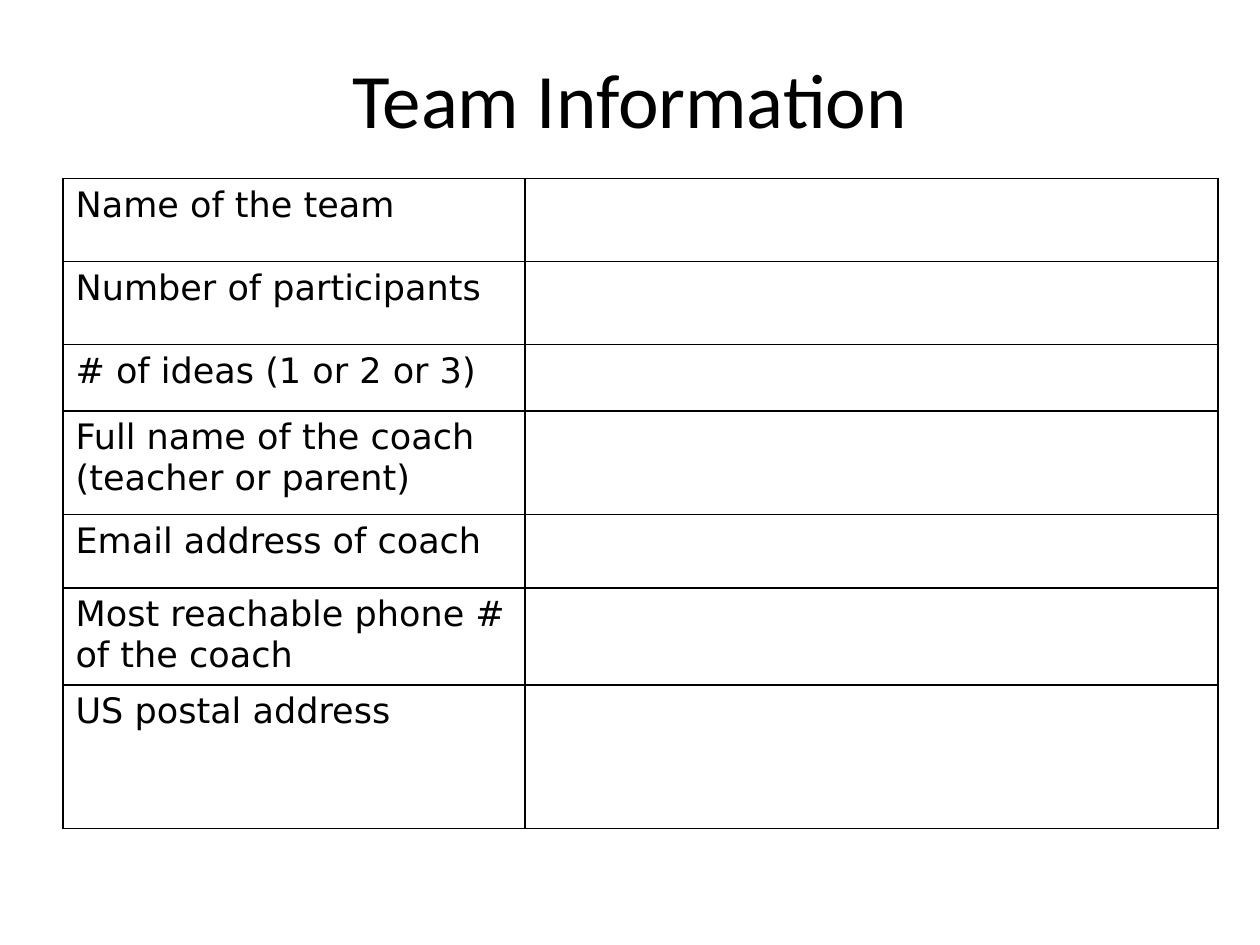
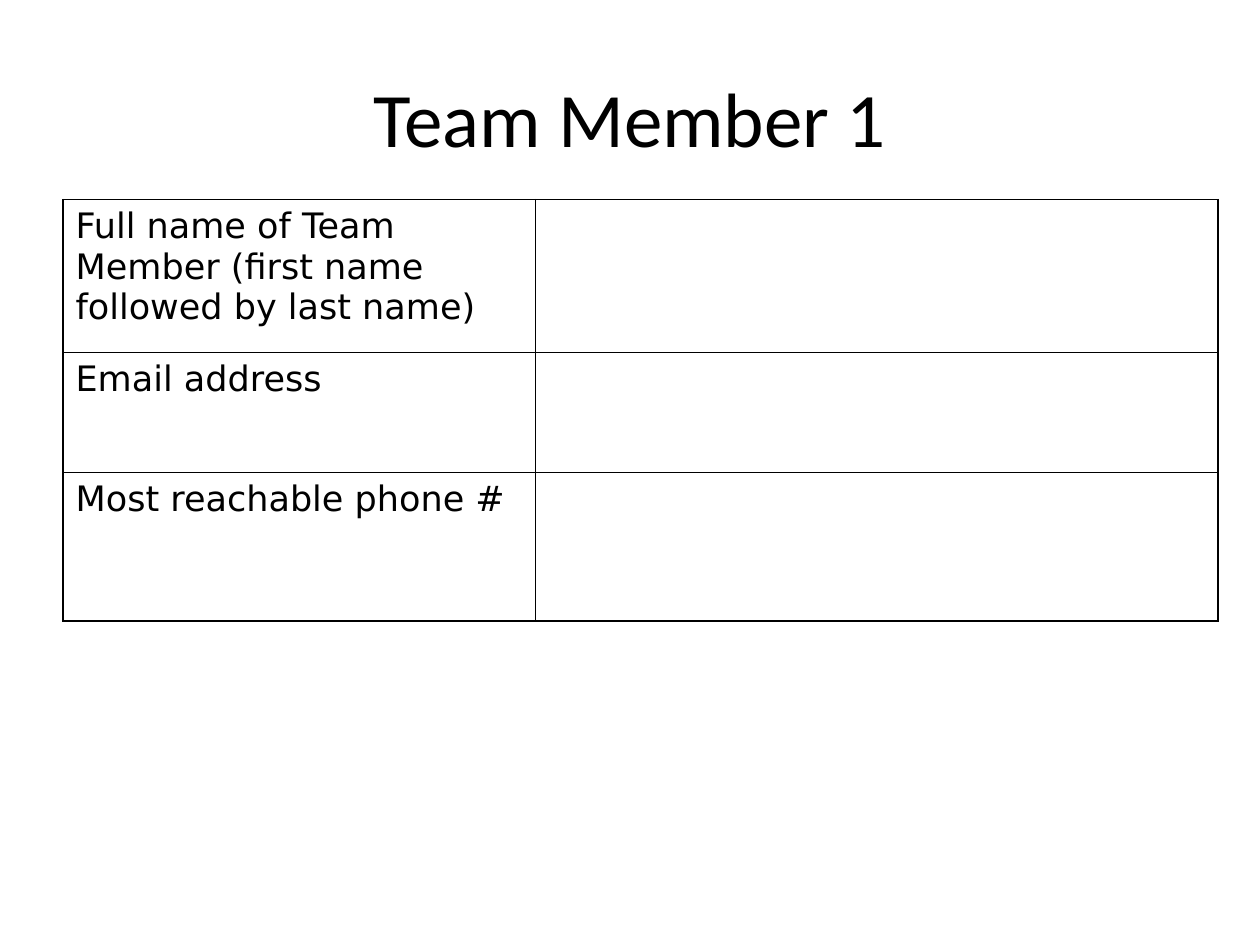
from lxml.etree import SubElement
from pptx import Presentation
from pptx.dml.color import RGBColor
from pptx.enum.text import MSO_ANCHOR, PP_ALIGN
from pptx.oxml.ns import qn
from pptx.util import Pt

COLOURS = {"ink": "000000", "paper": "FFFFFF"}
TITLE_FONT, TITLE_SIZE = "Calibri", 44
LABEL_FONT, LABEL_SIZE = "DejaVu Sans", 20
LEFT, TITLE_TOP = 36, 21.6
TITLE_WIDTH, FORM_WIDTH = 648, 660

TEAM_ROWS = [
    ("Name of the team", 47.5),
    ("Number of participants", 47.5),
    ("# of ideas (1 or 2 or 3)", 38),
    ("Full name of the coach (teacher or parent)", 59),
    ("Email address of coach", 42),
    ("Most reachable phone # of the coach", 55.5),
    ("US postal address", 82),
]
MEMBER_ROWS = [
    ("Full name of Team Member (first name followed by last name)", 87.5),
    ("Email address", 68.5),
    ("Most reachable phone #", 85),
]


def add_span(paragraph, text, font, size):
    span = paragraph.add_run()
    span.text = text
    span.font.name = font
    span.font.size = Pt(size)
    span.font.color.rgb = RGBColor.from_string(COLOURS["ink"])


def add_title(page, text, left, top, width, height):
    box = page.shapes.add_textbox(Pt(left), Pt(top), Pt(width), Pt(height))
    frame = box.text_frame
    frame.word_wrap = True
    frame.vertical_anchor = MSO_ANCHOR.MIDDLE
    paragraph = frame.paragraphs[0]
    paragraph.alignment = PP_ALIGN.CENTER
    add_span(paragraph, text, TITLE_FONT, TITLE_SIZE)


def style_cell(cell):
    properties = cell._tc.get_or_add_tcPr()
    for side in ("lnL", "lnR", "lnT", "lnB"):
        line = SubElement(properties, qn(f"a:{side}"), w=str(Pt(1)))
        fill = SubElement(line, qn("a:solidFill"))
        SubElement(fill, qn("a:srgbClr"), val=COLOURS["ink"])
    cell.fill.background()


def add_form(page, rows, left, top, width, label_width):
    height = sum(row_height for _, row_height in rows)
    table = page.shapes.add_table(
        len(rows), 2, Pt(left), Pt(top), Pt(width), Pt(height)
    ).table
    table.first_row = False
    table.horz_banding = False
    table.columns[0].width = Pt(label_width)
    table.columns[1].width = Pt(width - label_width)
    for row, (label, row_height) in zip(table.rows, rows):
        row.height = Pt(row_height)
        for cell in row.cells:
            style_cell(cell)
        add_span(row.cells[0].text_frame.paragraphs[0], label, LABEL_FONT, LABEL_SIZE)


def add_form_page(deck, title, title_height, rows, form_top, label_width):
    page = deck.slides.add_slide(deck.slide_layouts[6])
    background = page.background.fill
    background.solid()
    background.fore_color.rgb = RGBColor.from_string(COLOURS["paper"])
    add_title(page, title, LEFT, TITLE_TOP, TITLE_WIDTH, title_height)
    add_form(page, rows, LEFT, form_top, FORM_WIDTH, label_width)


def main():
    deck = Presentation()
    deck.slide_width, deck.slide_height = Pt(720), Pt(540)
    add_form_page(deck, "Team Information", 68.4, TEAM_ROWS, 102, 264)
    add_form_page(deck, "Team Member 1", 90, MEMBER_ROWS, 114, 270)
    deck.save("out.pptx")


if __name__ == "__main__":
    main()
